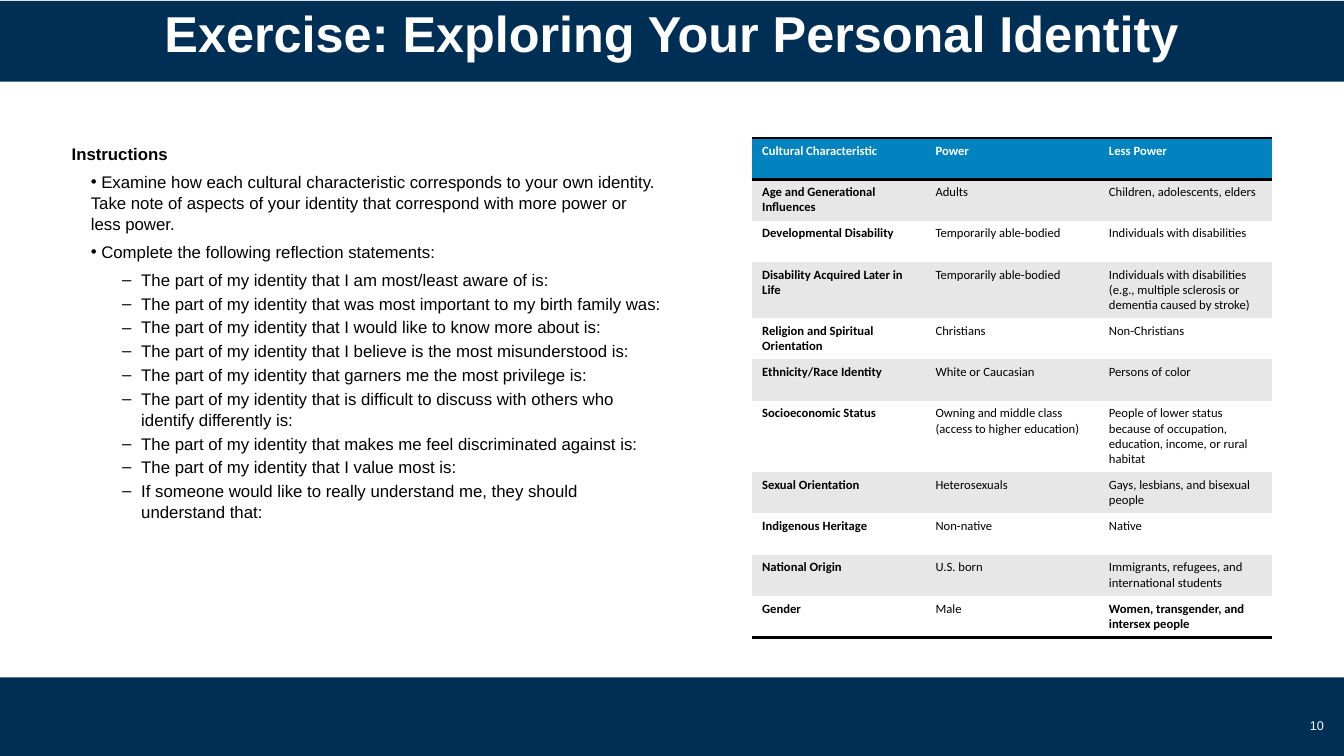
"""Build the personal identity exercise slide."""
from dataclasses import dataclass

from lxml.etree import SubElement
from pptx import Presentation
from pptx.dml.color import RGBColor
from pptx.enum.shapes import MSO_SHAPE
from pptx.enum.text import MSO_ANCHOR, MSO_AUTO_SIZE, PP_ALIGN
from pptx.oxml import parse_xml
from pptx.oxml.ns import nsdecls, qn
from pptx.util import Inches, Pt

COLORS = {"navy": "002F56", "blue": "0083BE", "band": "E7E7E7",
          "white": "FFFFFF", "black": "000000"}
WIDTH, HEIGHT = Inches(13.33), Inches(7.5)
NO_STYLE = "{2D5ABB26-0587-4C30-8999-92F81FD0307C}"


@dataclass
class Box:
    """Place and size in percent of the slide."""
    left: float
    top: float
    width: float
    height: float

    def emu(self) -> dict[str, int]:
        return {"left": int(self.left * WIDTH / 100), "top": int(self.top * HEIGHT / 100),
                "width": int(self.width * WIDTH / 100), "height": int(self.height * HEIGHT / 100)}


@dataclass
class Level:
    """Paragraph format of one outline level."""
    margin: float
    indent: float
    after: int
    bullet: str = ""
    bold: bool = False
    depth: int = 0


HEADING = Level(0, 0, 5, bold=True)
POINT = Level(0.19, 0, 5, "•")
STATEMENT = Level(0.69, -0.19, 2, "–", depth=1)

BANDS = [Box(0, 89.6, 100, 10.4), Box(0, 0.13, 100, 10.67)]
TITLE = Box(0, -1.07, 100, 10.67)
BODY = Box(4.58, 18.27, 45.39, 63.47)
NUMBER = Box(75.92, 93.33, 23.33, 5.33)
TABLE = Box(55.96, 18.27, 38.71, 60.13)

OUTLINE = [
    (HEADING, "Instructions"),
    (POINT, " Examine how each cultural characteristic corresponds to your own identity. "
            "Take note of aspects of your identity that correspond with more power or less power."),
    (POINT, " Complete the following reflection statements:"),
] + [(STATEMENT, s) for s in (
    "The part of my identity that I am most/least aware of is:",
    "The part of my identity that was most important to my birth family was:",
    "The part of my identity that I would like to know more about is:",
    "The part of my identity that I believe is the most misunderstood is:",
    "The part of my identity that garners me the most privilege is:",
    "The part of my identity that is difficult to discuss with others who identify differently is:",
    "The part of my identity that makes me feel discriminated against is:",
    "The part of my identity that I value most is:",
    "If someone would like to really understand me, they should understand that:",
)]

ROWS = [
    ("Cultural Characteristic", "Power", "Less Power"),
    ("Age and Generational Influences", "Adults", "Children, adolescents, elders"),
    ("Developmental Disability", "Temporarily able-bodied", "Individuals with disabilities"),
    ("Disability Acquired Later in Life", "Temporarily able-bodied",
     "Individuals with disabilities (e.g., multiple sclerosis or dementia caused by stroke)"),
    ("Religion and Spiritual Orientation", "Christians", "Non-Christians"),
    ("Ethnicity/Race Identity", "White or Caucasian", "Persons of color"),
    ("Socioeconomic Status", "Owning and middle class (access to higher education)",
     "People of lower status because of occupation, education, income, or rural habitat"),
    ("Sexual Orientation", "Heterosexuals", "Gays, lesbians, and bisexual people"),
    ("Indigenous Heritage", "Non-native", "Native"),
    ("National Origin", "U.S. born", "Immigrants, refugees, and international students"),
    ("Gender", "Male", "Women, transgender, and intersex people"),
]


def apply(target, values: dict) -> None:
    for name, value in values.items():
        setattr(target, name, value)


def write(p, text: str, size: int, color: str, bold: bool = False, face: str = "Arial") -> None:
    r = p.add_run()
    r.text = text
    apply(r.font, {"name": face, "size": Pt(size), "bold": bold})
    r.font.color.rgb = RGBColor.from_string(COLORS[color])


def add_band(slide, box: Box) -> None:
    sp = slide.shapes.add_shape(MSO_SHAPE.RECTANGLE, **box.emu())
    sp.shadow.inherit = False
    sp.fill.solid()
    sp.fill.fore_color.rgb = RGBColor.from_string(COLORS["navy"])
    sp.line.fill.background()
    slide.shapes._spTree.insert(2, sp._element)


def add_line(sp, box: Box, text: str, size: int, align: PP_ALIGN, bold: bool) -> None:
    apply(sp, box.emu())
    tf = sp.text_frame
    apply(tf, {"word_wrap": True, "auto_size": MSO_AUTO_SIZE.NONE,
               "vertical_anchor": MSO_ANCHOR.MIDDLE})
    p = tf.paragraphs[0]
    p.alignment = align
    write(p, text, size, "white", bold)


def add_outline(sp) -> None:
    apply(sp, BODY.emu())
    tf = sp.text_frame
    apply(tf, {"word_wrap": True, "auto_size": MSO_AUTO_SIZE.NONE,
               "vertical_anchor": MSO_ANCHOR.TOP})
    for i, (level, text) in enumerate(OUTLINE):
        p = tf.add_paragraph() if i else tf.paragraphs[0]
        pPr = p._p.get_or_add_pPr()
        pPr.set("marL", str(Inches(level.margin)))
        pPr.set("indent", str(Inches(level.indent)))
        if level.bullet:
            SubElement(pPr, qn("a:buChar")).set("char", level.bullet)
        else:
            SubElement(pPr, qn("a:buNone"))
        apply(p, {"level": level.depth, "alignment": PP_ALIGN.LEFT, "line_spacing": 1.04,
                  "space_before": Pt(0), "space_after": Pt(level.after)})
        write(p, text, 12, "black", level.bold)


def add_border(cell, side: str) -> None:
    cell._tc.get_or_add_tcPr().insert(0, parse_xml(
        f'<a:{side} {nsdecls("a")} w="{Pt(2)}"><a:solidFill>'
        f'<a:srgbClr val="{COLORS["black"]}"/></a:solidFill></a:{side}>'))


def add_identity_table(slide) -> None:
    frame = slide.shapes.add_table(len(ROWS), len(ROWS[0]), **TABLE.emu())
    table = frame.table
    table._tbl.tblPr.find(qn("a:tableStyleId")).text = NO_STYLE
    last = len(ROWS) - 1
    for i, row in enumerate(ROWS):
        fill = "blue" if i == 0 else "band" if i % 2 else "white"
        for j, text in enumerate(row):
            cell = table.cell(i, j)
            cell.fill.solid()
            cell.fill.fore_color.rgb = RGBColor.from_string(COLORS[fill])
            bold = i == 0 or j == 0 or (i, j) == (last, 2)
            write(cell.text_frame.paragraphs[0], text, 9,
                  "black" if i else "white", bold, "Calibri")
            if i in (0, last):
                add_border(cell, "lnB")
            if i == 0:
                add_border(cell, "lnT")


def main() -> None:
    prs = Presentation()
    apply(prs, {"slide_width": WIDTH, "slide_height": HEIGHT})
    s = prs.slides.add_slide(prs.slide_layouts[1])
    for band in BANDS:
        add_band(s, band)
    add_line(s.shapes.title, TITLE, "Exercise: Exploring Your Personal Identity",
             36, PP_ALIGN.CENTER, True)
    add_outline(s.placeholders[1])
    add_identity_table(s)
    add_line(s.shapes.add_textbox(**NUMBER.emu()), NUMBER, "10", 9, PP_ALIGN.RIGHT, False)
    prs.save("out.pptx")


if __name__ == "__main__":
    main()
